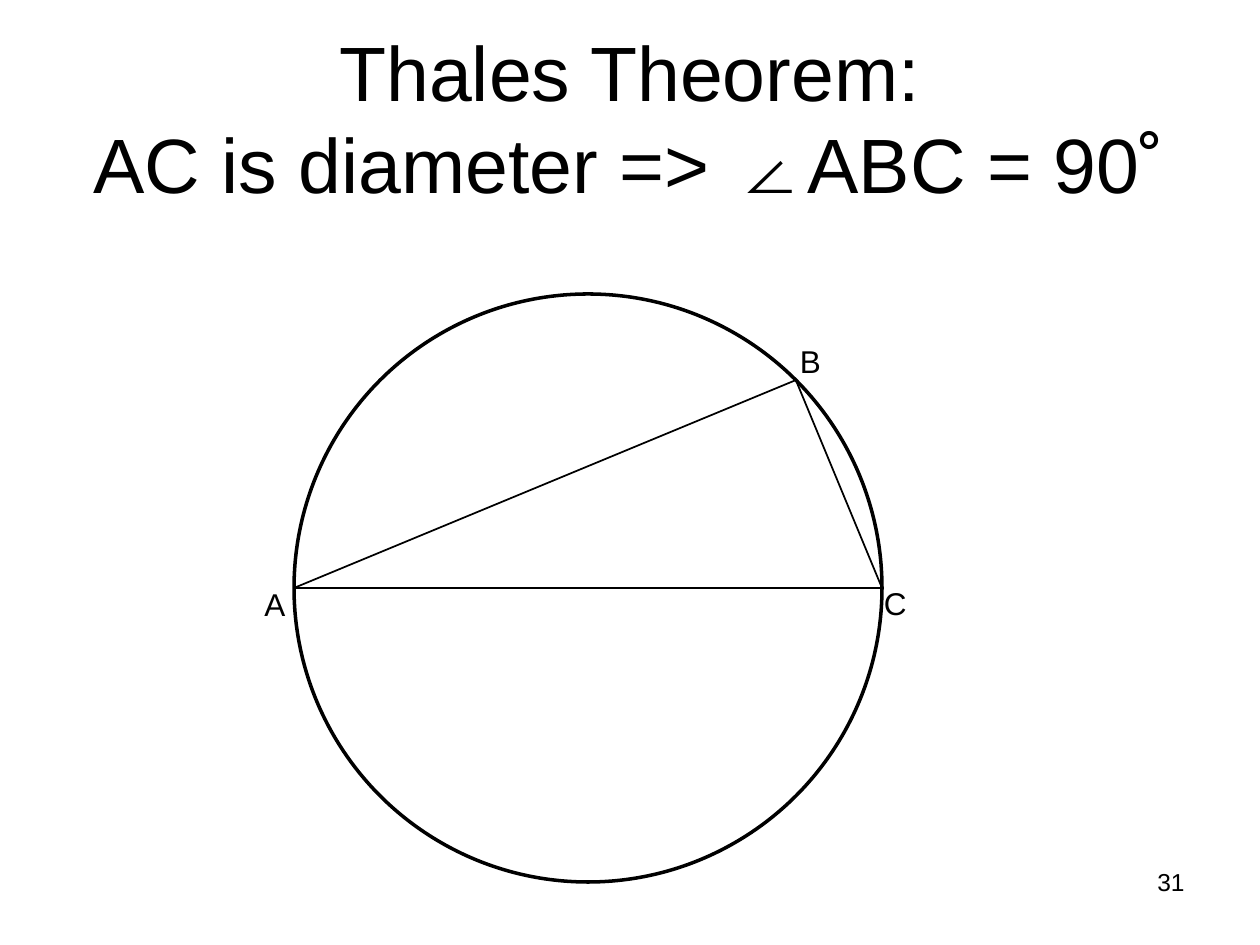
import math
import pptx
import pptx.util
import pptx.dml.color
import pptx.enum.shapes
import pptx.enum.text
import pptx.oxml.ns
import lxml.etree

Pt = pptx.util.Pt
Align = pptx.enum.text.PP_ALIGN
Anchor = pptx.enum.text.MSO_ANCHOR

# Content
FONT, INK, PAPER = "Arial", "000000", "FFFFFF"
TITLE = ["Thales Theorem:", "AC is diameter => ∠ABC = 90˚"]
PAGE_NUMBER = "31"
CENTER, RADIUS = 336, 168
ANGLES = {"A": 180, "B": 45, "C": 0}
SIDES = ["AC", "BA", "BC"]
LABELS = {"A": (144, 331), "C": (498, 330), "B": (450, 192)}  # left, top


def color(value):
    return pptx.dml.color.RGBColor.from_string(value)


def add_text(page, lines, left, top, width, height, size,
             align=Align.LEFT, anchor=Anchor.TOP):
    box = page.shapes.add_textbox(Pt(left), Pt(top), Pt(width), Pt(height))
    frame = box.text_frame
    frame.word_wrap = True
    frame.vertical_anchor = anchor
    para = frame.paragraphs[0]
    para.alignment = align
    for index, line in enumerate(lines):
        if index:
            para.add_line_break()
        span = para.add_run()
        span.text = line
        span.font.name = FONT
        span.font.size = Pt(size)
        span.font.color.rgb = color(INK)
    para.font.size = Pt(size)
    return box


def point_on_circle(degrees):
    angle = math.radians(degrees)
    return (Pt(round(CENTER + RADIUS * math.cos(angle), 2)),
            Pt(round(CENTER - RADIUS * math.sin(angle), 2)))


def add_side(page, start, end):
    side = page.shapes.add_connector(
        pptx.enum.shapes.MSO_CONNECTOR.STRAIGHT, *start, *end)
    side.line.color.rgb = color(INK)
    side.line.width = Pt(1)
    properties = side._element.spPr
    lxml.etree.SubElement(properties, pptx.oxml.ns.qn("a:effectLst"))


deck = pptx.Presentation()
deck.slide_width, deck.slide_height = Pt(720), Pt(540)
page = deck.slides.add_slide(deck.slide_layouts[6])
page.background.fill.solid()
page.background.fill.fore_color.rgb = color(PAPER)

# Title
add_text(page, TITLE, 36, 21.6, 648, 90, 44, Align.CENTER, Anchor.MIDDLE)

# Circle
circle = page.shapes.add_shape(
    pptx.enum.shapes.MSO_SHAPE.OVAL, Pt(CENTER - RADIUS), Pt(CENTER - RADIUS),
    Pt(2 * RADIUS), Pt(2 * RADIUS))
circle.shadow.inherit = False
circle.fill.solid()
circle.fill.fore_color.rgb = color(PAPER)
circle.line.color.rgb = color(INK)
circle.line.width = Pt(2)

# Triangle inscribed on the diameter
corners = {name: point_on_circle(angle) for name, angle in ANGLES.items()}
for start, end in SIDES:
    add_side(page, corners[start], corners[end])

# Corner labels
for name, (left, top) in LABELS.items():
    add_text(page, [name], left, top, 30, 29, 18)

# Page number
add_text(page, [PAGE_NUMBER], 516, 492, 168, 37.5, 14, Align.RIGHT)

deck.save("out.pptx")
